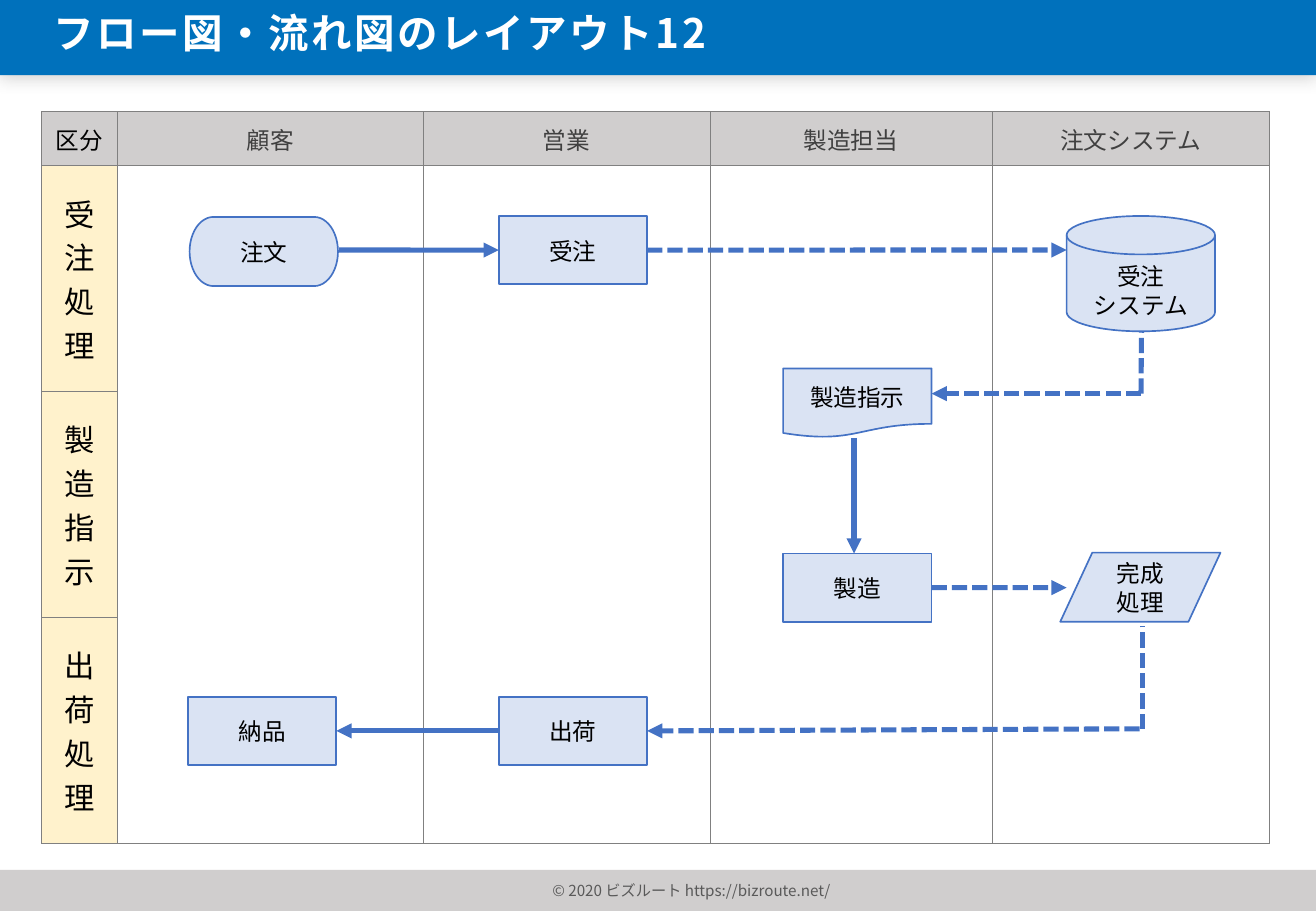
from lxml import etree
from pptx import Presentation
from pptx.dml.color import RGBColor as RGB
from pptx.enum.dml import MSO_LINE as Dash
from pptx.enum.shapes import MSO_CONNECTOR as Conn, MSO_SHAPE as Kind
from pptx.enum.text import MSO_ANCHOR as Anchor, MSO_AUTO_SIZE as Auto, PP_ALIGN as Align
from pptx.oxml import parse_xml
from pptx.oxml.ns import nsdecls, qn
from pptx.util import Pt

FONT = "Noto Sans CJK JP"
HUES = {
    "band": "0071BC", "gray": "D0CECE", "cream": "FFF2CC", "pale": "DAE3F3",
    "blue": "4472C4", "rule": "808080", "black": "000000", "dark": "404040",
    "note": "595959", "white": "FFFFFF",
}
LANES = ["区分", "顧客", "営業", "製造担当", "注文システム"]
STEPS = ["受注処理", "製造指示", "出荷処理"]
COLS = [45, 181.3, 170, 167.1, 164.7]
ROWS = [32.2] + [133.8] * 3


def hue(name):
    return RGB.from_string(HUES[name])


class Flow:
    def __init__(self, slide):
        self.slide = slide
        self.shapes = slide.shapes

    def style(self, frame, text, size, color, align=Align.CENTER, bold=False, gap=None):
        frame.text = text
        for para in frame.paragraphs:
            para.alignment = align
            if gap:
                para.line_spacing = gap
            for run in para.runs:
                font = run.font
                font.name, font.size, font.bold = FONT, Pt(size), bold
                font.color.rgb = hue(color)
                east = etree.SubElement(font._element, qn("a:ea"))
                east.set("typeface", FONT)

    def block(self, kind, x, y, w, h, fill, line=None):
        shape = self.shapes.add_shape(kind, Pt(x), Pt(y), Pt(w), Pt(h))
        shape.shadow.inherit = False
        shape.fill.solid()
        shape.fill.fore_color.rgb = hue(fill)
        if line:
            shape.line.color.rgb = hue(line)
            shape.line.width = Pt(1)
        else:
            shape.line.fill.background()
        return shape

    def shade(self, shape):
        glow = shape.element.spPr.find(qn("a:effectLst"))
        glow.append(parse_xml(
            f'<a:outerShdw {nsdecls("a")} blurRad="{Pt(10)}" dist="{Pt(1)}" dir="5400000" '
            f'algn="t" rotWithShape="0"><a:srgbClr val="{HUES["note"]}">'
            '<a:alpha val="30000"/></a:srgbClr></a:outerShdw>'))

    def title(self, text, x, y, w, h):
        box = self.shapes.title
        box.left, box.top, box.width, box.height = Pt(x), Pt(y), Pt(w), Pt(h)
        frame = box.text_frame
        frame.auto_size = Auto.NONE
        frame.vertical_anchor = Anchor.TOP
        self.style(frame, text, 24, "white", Align.LEFT, True, 0.9)
        for run in frame.paragraphs[0].runs:
            run.font._element.set("spc", "150")
        # Bring the title in front of its band
        box.element.getparent().append(box.element)

    def label(self, text, x, y, w, h):
        frame = self.shapes.add_textbox(Pt(x), Pt(y), Pt(w), Pt(h)).text_frame
        frame.word_wrap = False
        frame.vertical_anchor = Anchor.MIDDLE
        self.style(frame, text, 9, "note")

    def node(self, text, x, y, kind=Kind.RECTANGLE, w=88, h=40.5, anchor=Anchor.MIDDLE):
        shape = self.block(kind, x, y, w, h, "pale", "blue")
        shape.text_frame.vertical_anchor = anchor
        self.style(shape.text_frame, text, 14, "black", gap=Pt(17.5))
        return shape

    def link(self, start, end, dash=False, head=True, source=None, goal=None):
        line = self.shapes.add_connector(Conn.STRAIGHT, *map(Pt, start + end))
        if source:
            line.begin_connect(*source)
        if goal:
            line.end_connect(*goal)
        line.line.color.rgb = hue("blue")
        line.line.width = Pt(3)
        if dash:
            line.line.dash_style = Dash.SQUARE_DOT
        props = line.element.spPr
        if head:
            etree.SubElement(props.find(qn("a:ln")), qn("a:tailEnd")).set("type", "triangle")
        etree.SubElement(props, qn("a:effectLst"))

    def cell(self, cell, fill=None):
        cell.vertical_anchor = Anchor.MIDDLE
        if fill:
            cell.fill.solid()
            cell.fill.fore_color.rgb = hue(fill)
        else:
            cell.fill.background()
        props = cell._tc.get_or_add_tcPr()
        for spot, side in enumerate("LRTB"):
            props.insert(spot, parse_xml(
                f'<a:ln{side} {nsdecls("a")} w="{Pt(0.5)}"><a:solidFill>'
                f'<a:srgbClr val="{HUES["rule"]}"/></a:solidFill></a:ln{side}>'))
        return props

    def grid(self, x, y):
        table = self.shapes.add_table(len(ROWS), len(COLS), Pt(x), Pt(y),
                                      Pt(sum(COLS)), Pt(sum(ROWS))).table
        table.first_row = table.horz_banding = False
        for col, width in zip(table.columns, COLS):
            col.width = Pt(width)
        for row, height in zip(table.rows, ROWS):
            row.height = Pt(height)
        # Lane heads
        for c, text in enumerate(LANES):
            self.cell(table.cell(0, c), "gray")
            self.style(table.cell(0, c).text_frame, text, 14, "dark" if c else "black")
        # Upright step names and open lanes
        for r, text in enumerate(STEPS, 1):
            self.cell(table.cell(r, 0), "cream").set("vert", "eaVert")
            self.style(table.cell(r, 0).text_frame, text, 18, "black")
            for c in range(1, len(LANES)):
                self.cell(table.cell(r, c))
        for c in range(1, len(LANES)):
            table.cell(1, c).merge(table.cell(len(STEPS), c))


def main():
    deck = Presentation()
    deck.slide_width, deck.slide_height = Pt(780), Pt(540)
    flow = Flow(deck.slides.add_slide(deck.slide_layouts[5]))

    # Title band and footer
    flow.shade(flow.block(Kind.RECTANGLE, 0, 0, 780, 44.6, "band"))
    flow.title("フロー図・流れ図のレイアウト12", 24.5, 4.3, 652, 36)
    flow.block(Kind.RECTANGLE, 0, 515.6, 780, 24.4, "gray")
    flow.label("© 2020 ビズルート https://bizroute.net/", 313.2, 519, 193, 18)

    # Swim lanes
    flow.grid(24.6, 66.1)

    # Steps
    flow.node("注文", 112.4, 128.6, Kind.FLOWCHART_TERMINATOR, h=41)
    take = flow.node("受注", 295.6, 128)
    flow.node("製造指示", 464.2, 218.4, Kind.FLOWCHART_DOCUMENT, h=41)
    flow.node("受注\nシステム", 632.2, 128, Kind.FLOWCHART_MAGNETIC_DISK, h=68.4,
              anchor=Anchor.TOP)
    make = flow.node("製造", 464.2, 328.1)
    flow.node("完成\n処理", 628.4, 327.6, Kind.FLOWCHART_DATA, w=95, h=41)
    ship = flow.node("出荷", 295.6, 413)
    give = flow.node("納品", 111.4, 413)

    # Arrows
    flow.link((200.9, 148.2), (295.6, 148.2), goal=(take, 1))
    flow.link((383.6, 148.2), (632.2, 148.2), dash=True, source=(take, 3))
    flow.link((676.3, 233.3), (552.2, 233.3), dash=True)
    flow.link((676.3, 233.3), (676.6, 196.6), dash=True, head=False)
    flow.link((506.2, 259.6), (506.2, 328.1))
    flow.link((552.2, 348.3), (632.2, 348.3), dash=True, source=(make, 3))
    flow.link((677, 432), (677, 371.3), dash=True, head=False)
    flow.link((675.5, 432), (383.6, 433.2), dash=True, goal=(ship, 3))
    flow.link((295.6, 433.2), (199.4, 433.2), source=(ship, 1), goal=(give, 3))

    deck.save("out.pptx")


if __name__ == "__main__":
    main()
